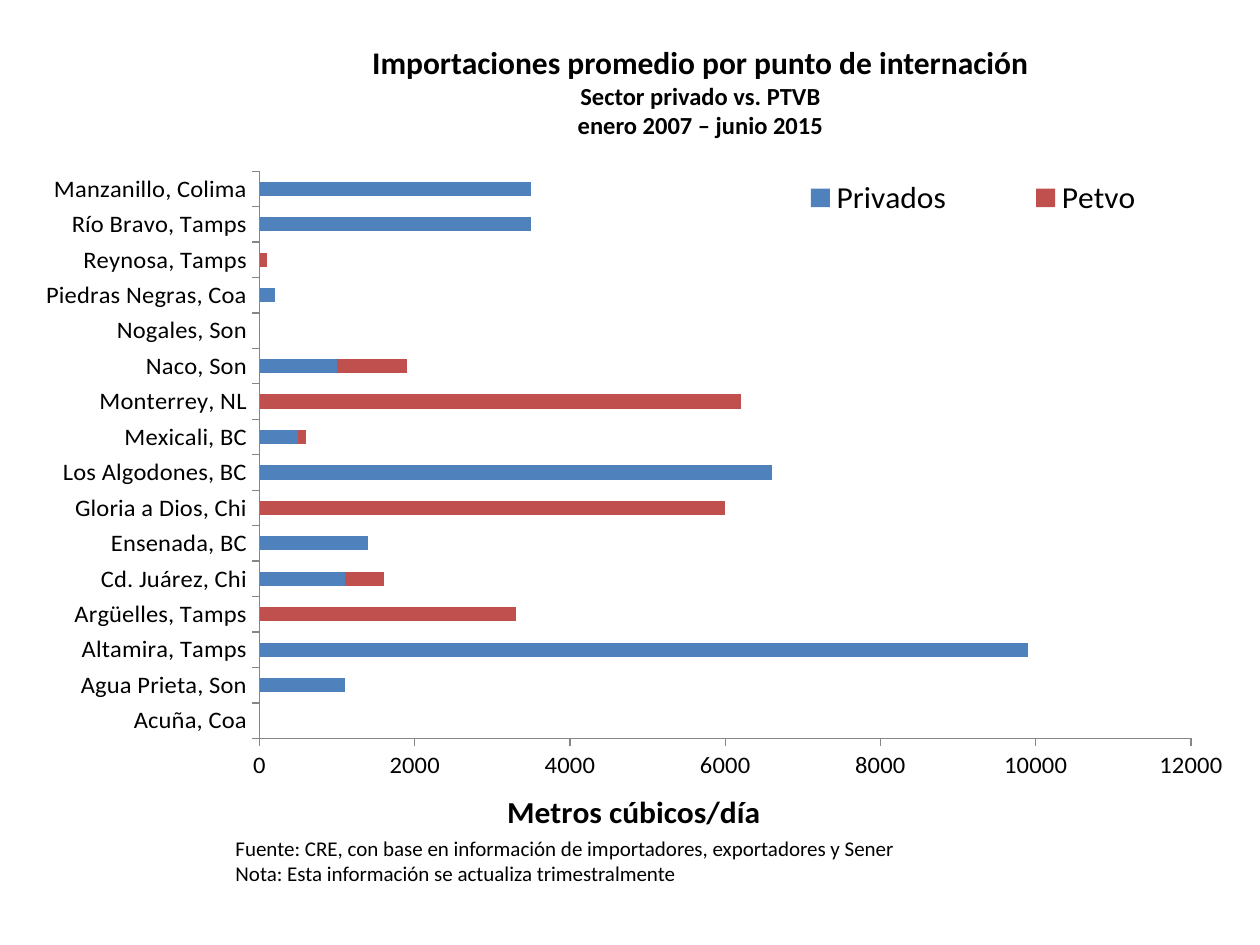
"""Build a slide with a stacked bar chart of average imports by entry point."""
from pptx import Presentation
from pptx.chart.data import CategoryChartData
from pptx.dml.color import RGBColor
from pptx.enum.chart import XL_CHART_TYPE, XL_LEGEND_POSITION, XL_TICK_MARK
from pptx.enum.text import PP_ALIGN
from pptx.oxml import parse_xml
from pptx.oxml.ns import nsdecls
from pptx.util import Inches, Pt

BLACK = RGBColor(0x00, 0x00, 0x00)
GRAY = RGBColor(0x86, 0x86, 0x86)
BLUE = RGBColor(0x4F, 0x81, 0xBD)
RED = RGBColor(0xC0, 0x50, 0x4D)
FACE = "Calibri"

ROWS = [
    ("Acuña, Coa", 0, 0),
    ("Agua Prieta, Son", 1100, 0),
    ("Altamira, Tamps", 9900, 0),
    ("Argüelles, Tamps", 0, 3300),
    ("Cd. Juárez, Chi", 1100, 500),
    ("Ensenada, BC", 1400, 0),
    ("Gloria a Dios, Chi", 0, 6000),
    ("Los Algodones, BC", 6600, 0),
    ("Mexicali, BC", 500, 100),
    ("Monterrey, NL", 0, 6200),
    ("Naco, Son", 1000, 900),
    ("Nogales, Son", 0, 0),
    ("Piedras Negras, Coa", 200, 0),
    ("Reynosa, Tamps", 0, 100),
    ("Río Bravo, Tamps", 3500, 0),
    ("Manzanillo, Colima", 3500, 0),
]


def add_text(slide, box, lines, bold, align):
    frame = slide.shapes.add_textbox(*map(Inches, box)).text_frame
    frame.word_wrap = True
    for index, (text, size) in enumerate(lines):
        para = frame.paragraphs[0] if index == 0 else frame.add_paragraph()
        para.text = text
        para.alignment = align
        para.font.name = FACE
        para.font.size = Pt(size)
        para.font.bold = bold
        para.font.color.rgb = BLACK


def set_layout(part, index, values, inner=False):
    for old in part.xpath("c:layout"):
        part.remove(old)
    tags = '<c:layoutTarget val="inner"/>' if inner else ""
    tags += '<c:xMode val="edge"/><c:yMode val="edge"/>'
    tags += "".join(f'<c:{key} val="{value}"/>' for key, value in zip("xywh", values))
    part.insert(index, parse_xml(
        f'<c:layout {nsdecls("c")}><c:manualLayout>{tags}</c:manualLayout></c:layout>'))


prs = Presentation()
prs.slide_width, prs.slide_height = Inches(10), Inches(7.5)
slide = prs.slides.add_slide(prs.slide_layouts[6])

add_text(slide, (2.03, 0.29, 7.06, 0.88), [
    ("Importaciones promedio por punto de internación", 18),
    ("Sector privado vs. PTVB", 14),
    ("enero 2007 – junio 2015", 14),
], True, PP_ALIGN.CENTER)

names, private, public = zip(*ROWS)
data = CategoryChartData(number_format="General")
data.categories = names
data.add_series("Privados", private)
data.add_series("Petvo", public)
chart = slide.shapes.add_chart(
    XL_CHART_TYPE.BAR_STACKED, *map(Inches, (0.14, 1.2, 9.6, 5.47)), data).chart
chart.has_title = False
chart.font.name = FACE
chart.font.size = Pt(18)
chart.font.color.rgb = BLACK

plot = chart.plots[0]
plot.gap_width = 150
plot.overlap = 100
plot.vary_by_categories = False
for series, color in zip(plot.series, (BLUE, RED)):
    series.format.fill.solid()
    series.format.fill.fore_color.rgb = color

for axis in (chart.category_axis, chart.value_axis):
    axis.has_major_gridlines = False
    axis.major_tick_mark = XL_TICK_MARK.OUTSIDE
    axis.minor_tick_mark = XL_TICK_MARK.NONE
    axis.tick_labels.font.size = Pt(14)
    axis.format.line.color.rgb = GRAY
    axis.format.line.width = Pt(0.75)

scale = chart.value_axis
scale.minimum_scale, scale.maximum_scale, scale.major_unit = 0, 12000, 2000
scale.has_title = True
title = scale.axis_title.text_frame.paragraphs[0]
title.text = "Metros cúbicos/día"
title.font.name = FACE
title.font.size = Pt(18)
title.font.bold = True
title.font.color.rgb = BLACK

chart.has_legend = True
chart.legend.position = XL_LEGEND_POSITION.RIGHT
chart.legend.include_in_layout = False

root = chart.element
set_layout(root.xpath(".//c:plotArea")[0], 0, (0.2, 0.03, 0.77, 0.85), True)
set_layout(root.xpath(".//c:valAx/c:title")[0], 1, (0.4, 0.95))
set_layout(root.xpath(".//c:legend")[0], 1, (0.59, 0.03, 0.4, 0.08))

add_text(slide, (1.77, 6.58, 7.82, 1.11), [
    ("Fuente: CRE, con base en información de importadores, exportadores y Sener", 12),
    ("Nota: Esta información se actualiza trimestralmente", 12),
], False, PP_ALIGN.LEFT)

prs.save("out.pptx")
